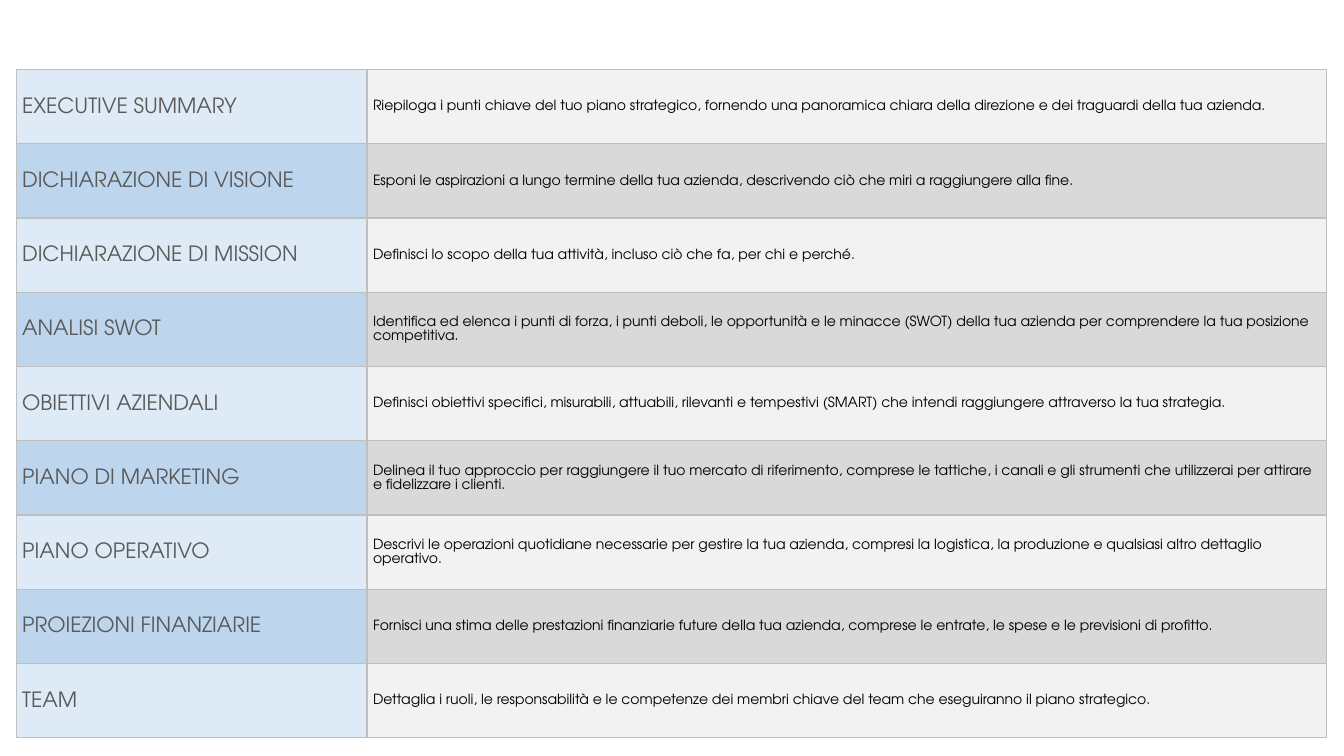
from lxml.etree import SubElement
from pptx import Presentation
from pptx.dml.color import RGBColor
from pptx.enum.text import MSO_ANCHOR
from pptx.oxml.ns import qn
from pptx.util import Inches, Pt

COLORS = {
    "label": "595959",
    "text": "000000",
    "border": "BFBFBF",
    "label_light": "DEEAF6",
    "label_dark": "BDD6EE",
    "text_light": "F2F2F2",
    "text_dark": "D9D9D9",
}

SECTIONS = [
    ("EXECUTIVE SUMMARY",
     "Riepiloga i punti chiave del tuo piano strategico, fornendo una panoramica chiara "
     "della direzione e dei traguardi della tua azienda."),
    ("DICHIARAZIONE DI VISIONE",
     "Esponi le aspirazioni a lungo termine della tua azienda, descrivendo ciò che miri "
     "a raggiungere alla fine."),
    ("DICHIARAZIONE DI MISSION",
     "Definisci lo scopo della tua attività, incluso ciò che fa, per chi e perché."),
    ("ANALISI SWOT",
     "Identifica ed elenca i punti di forza, i punti deboli, le opportunità e le minacce "
     "(SWOT) della tua azienda per comprendere la tua posizione competitiva."),
    ("OBIETTIVI AZIENDALI",
     "Definisci obiettivi specifici, misurabili, attuabili, rilevanti e tempestivi (SMART) "
     "che intendi raggiungere attraverso la tua strategia."),
    ("PIANO DI MARKETING",
     "Delinea il tuo approccio per raggiungere il tuo mercato di riferimento, comprese le "
     "tattiche, i canali e gli strumenti che utilizzerai per attirare e fidelizzare i clienti."),
    ("PIANO OPERATIVO",
     "Descrivi le operazioni quotidiane necessarie per gestire la tua azienda, compresi la "
     "logistica, la produzione e qualsiasi altro dettaglio operativo."),
    ("PROIEZIONI FINANZIARIE",
     "Fornisci una stima delle prestazioni finanziarie future della tua azienda, comprese "
     "le entrate, le spese e le previsioni di profitto."),
    ("TEAM",
     "Dettaglia i ruoli, le responsabilità e le competenze dei membri chiave del team che "
     "eseguiranno il piano strategico."),
]


class PlanSlide:
    """Holds the style and the current slide of the strategic plan."""

    font = "TeX Gyre Adventor"
    sizes = {"label": 15, "text": 10}

    def __init__(self, prs):
        self.slide = prs.slides.add_slide(prs.slide_layouts[6])

    def table(self, rows, left, top, widths, height):
        frame = self.slide.shapes.add_table(
            len(rows), len(widths), Inches(left), Inches(top),
            Inches(sum(widths)), Inches(height))
        table = frame.table
        table.first_row = table.horz_banding = False
        for column, width in zip(table.columns, widths):
            column.width = Inches(width)
        for i, row in enumerate(rows):
            table.rows[i].height = Inches(height / len(rows))
            shade = "dark" if i % 2 else "light"
            for j, (kind, text) in enumerate(zip(("label", "text"), row)):
                self.cell(table.cell(i, j), text, kind, shade)

    def cell(self, cell, text, kind, shade):
        self.borders(cell)
        cell.fill.solid()
        cell.fill.fore_color.rgb = RGBColor.from_string(COLORS[f"{kind}_{shade}"])
        cell.vertical_anchor = MSO_ANCHOR.MIDDLE
        cell.margin_left = cell.margin_right = Inches(0.06)
        cell.margin_top = cell.margin_bottom = 0
        p = cell.text_frame.paragraphs[0]
        p.line_spacing = 1.07
        r = p.add_run()
        r.text = text
        r.font.name = self.font
        r.font.size = Pt(self.sizes[kind])
        r.font.color.rgb = RGBColor.from_string(COLORS[kind])

    def borders(self, cell):
        props = cell._tc.get_or_add_tcPr()
        for side in "LRTB":
            line = SubElement(props, qn(f"a:ln{side}"), w=str(Pt(1)))
            fill = SubElement(line, qn("a:solidFill"))
            SubElement(fill, qn("a:srgbClr"), val=COLORS["border"])


def main():
    prs = Presentation()
    prs.slide_width = Inches(13.33)
    prs.slide_height = Inches(7.5)
    s = PlanSlide(prs)
    s.table(SECTIONS, 0.16, 0.69, (3.48, 9.52), 6.63)
    prs.save("out.pptx")


if __name__ == "__main__":
    main()
